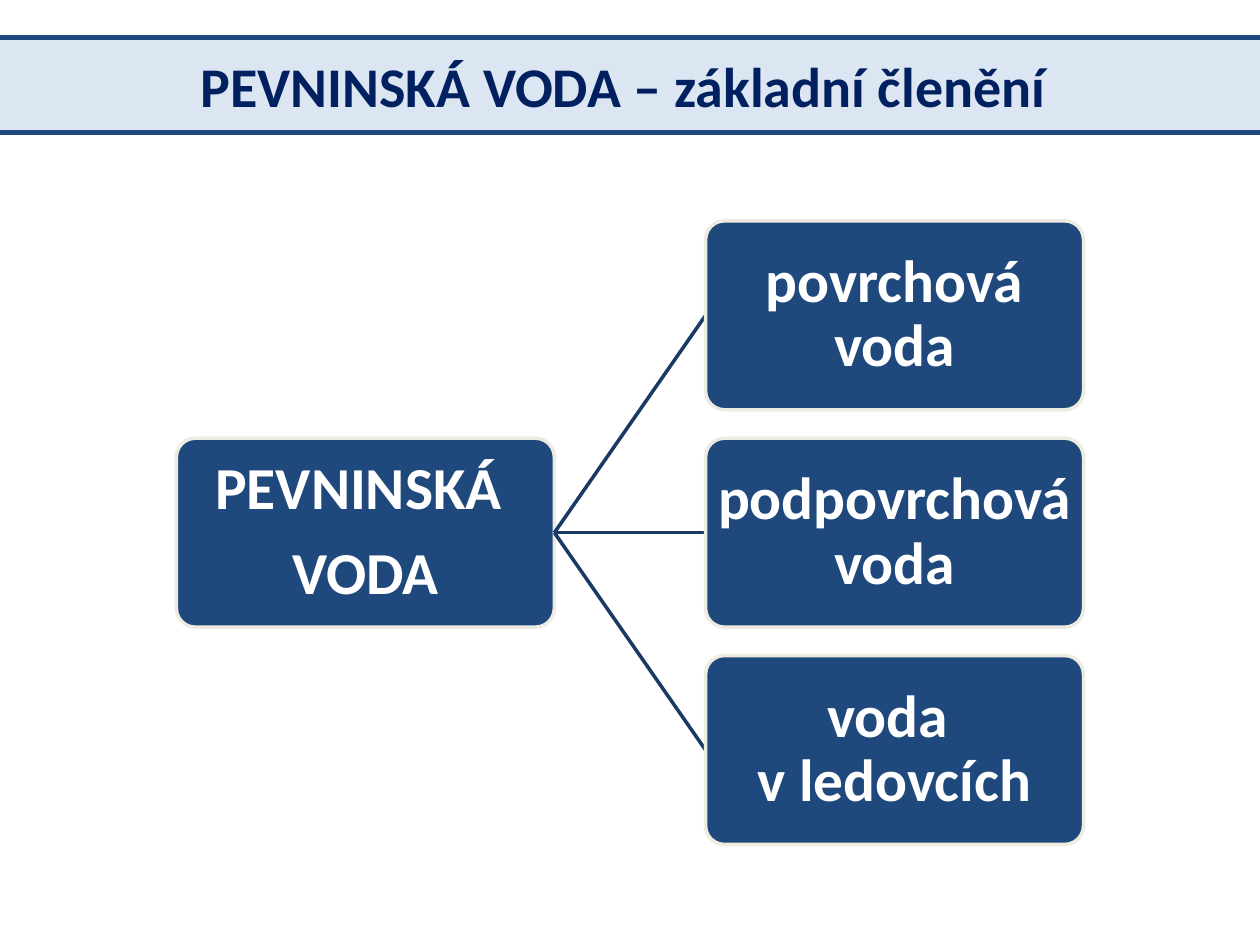
"""Builds a slide that divides continental water into three kinds."""
from lxml.etree import SubElement
from pptx import Presentation
from pptx.dml.color import RGBColor
from pptx.enum.shapes import MSO_CONNECTOR, MSO_SHAPE
from pptx.enum.text import MSO_ANCHOR, PP_ALIGN
from pptx.oxml.ns import qn
from pptx.util import Pt

BOX_W, BOX_H, PITCH = 216, 108, 124.2
ROOT_X, CHILD_X, TOP = 100.8, 403.2, 126.2
NAVY, CREAM, WHITE = "1F497D", "EEECE1", "FFFFFF"


def color(value):
    return RGBColor.from_string(value)


class Diagram:
    def __init__(self, slide, font="Calibri"):
        self.slide = slide
        self.font = font

    def shape(self, kind, x, y, w, h, fill, line, weight):
        s = self.slide.shapes.add_shape(kind, Pt(x), Pt(y), Pt(w), Pt(h))
        s.shadow.inherit = False
        s.fill.solid()
        s.fill.fore_color.rgb = color(fill)
        s.line.color.rgb = color(line)
        s.line.width = Pt(weight)
        return s

    def text(self, s, paragraphs, size, ink, spacing=1.0, gap=0):
        tf = s.text_frame
        tf.word_wrap = True
        tf.vertical_anchor = MSO_ANCHOR.MIDDLE
        for i, lines in enumerate(paragraphs):
            p = tf.add_paragraph() if i else tf.paragraphs[0]
            p.alignment = PP_ALIGN.CENTER
            p.line_spacing = spacing
            if i:
                p.space_before = Pt(gap)
            for j, line in enumerate(lines.split("\n")):
                if j:
                    p.add_line_break()
                r = p.add_run()
                r.text = line
                r.font.name = self.font
                r.font.size = Pt(size)
                r.font.bold = True
                r.font.color.rgb = color(ink)

    def title(self, words):
        s = self.shape(MSO_SHAPE.RECTANGLE, -8.64, 21.6, 737.28, 54, "DCE6F2", NAVY, 3)
        self.text(s, [words], 32, "002060")

    def box(self, x, y, *paragraphs):
        s = self.shape(MSO_SHAPE.ROUNDED_RECTANGLE, x, y, BOX_W, BOX_H, NAVY, CREAM, 2)
        s.adjustments[0] = 0.1
        tf = s.text_frame
        tf.margin_left = tf.margin_right = tf.margin_top = tf.margin_bottom = Pt(1.44)
        self.text(s, paragraphs, 34, WHITE, 0.9, 12)

    def link(self, x1, y1, x2, y2):
        c = self.slide.shapes.add_connector(
            MSO_CONNECTOR.STRAIGHT, Pt(x1), Pt(y1), Pt(x2), Pt(y2))
        c.line.color.rgb = color("193A64")
        c.line.width = Pt(2)
        SubElement(c._element.spPr, qn("a:effectLst"))


def main():
    prs = Presentation()
    prs.slide_width, prs.slide_height = Pt(720), Pt(540)
    d = Diagram(prs.slides.add_slide(prs.slide_layouts[6]))
    d.title("PEVNINSKÁ VODA – základní členění ")
    root_y = TOP + PITCH
    d.box(ROOT_X, root_y, "PEVNINSKÁ ", "VODA")
    kinds = ["povrchová voda", "podpovrchová voda", "voda \nv ledovcích"]
    for i, kind in enumerate(kinds):
        y = TOP + i * PITCH
        d.link(ROOT_X + BOX_W, root_y + BOX_H / 2, CHILD_X, y + BOX_H / 2)
        d.box(CHILD_X, y, kind)
    prs.save("out.pptx")


if __name__ == "__main__":
    main()
